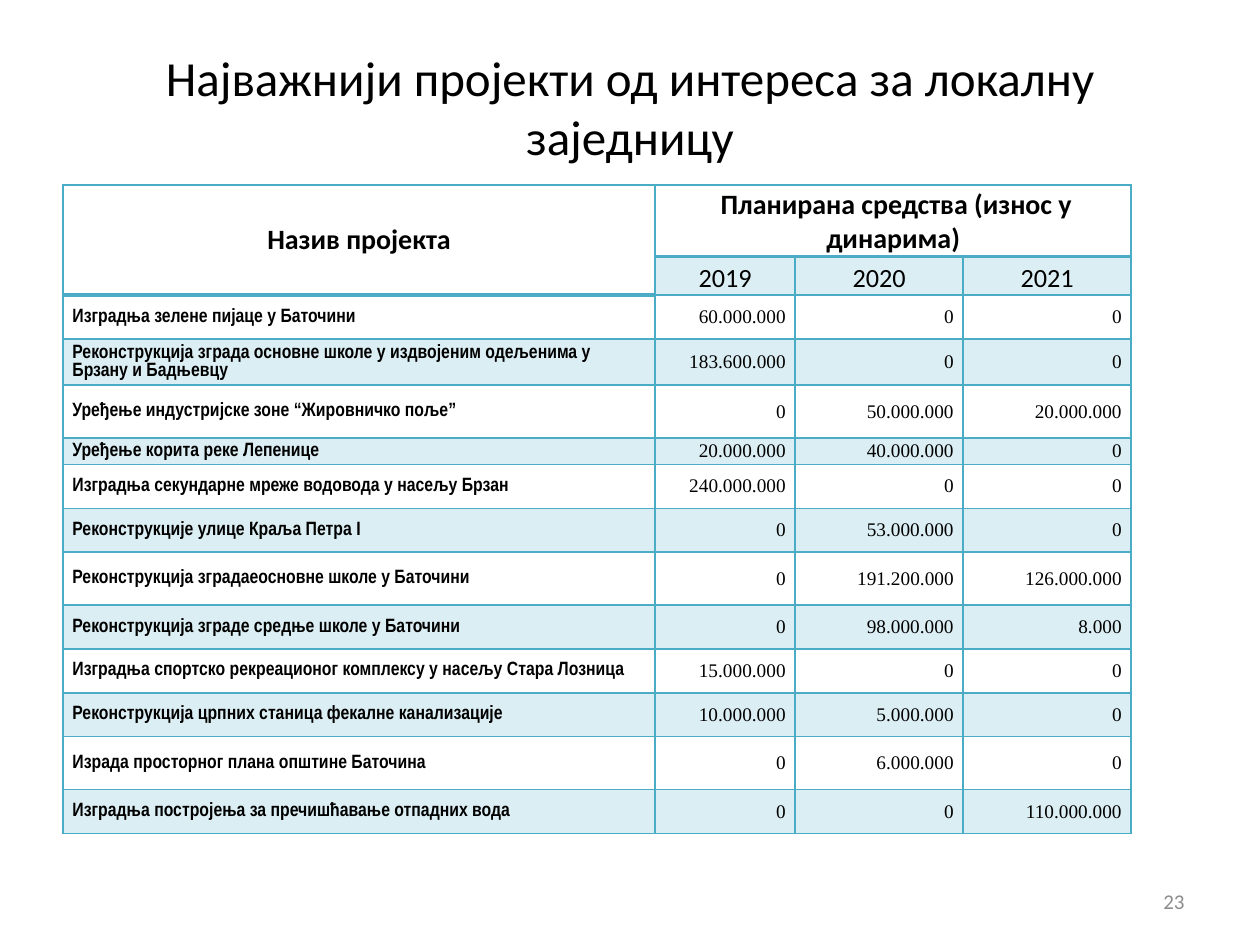
from lxml import etree
from pptx import Presentation
from pptx.dml.color import RGBColor
from pptx.enum.text import MSO_ANCHOR, PP_ALIGN
from pptx.oxml.ns import qn
from pptx.util import Pt

LEFT, CENTER, RIGHT = PP_ALIGN.LEFT, PP_ALIGN.CENTER, PP_ALIGN.RIGHT
MIDDLE, BOTTOM = MSO_ANCHOR.MIDDLE, MSO_ANCHOR.BOTTOM
TEAL, BLACK, GRAY = "4BACC6", "000000", "8C8C8C"

YEARS = ["2019", "2020", "2021"]
TALL, NORMAL, SHORT = 30.2, 25.1, 15.1
# Project name, planned amounts by year, row height
PROJECTS = [
    ("Изградња зелене пијаце у Баточини", ["60.000.000", "0", "0"], NORMAL),
    ("Реконструкција зграда основне школе у издвојеним одељенима у Брзану и Бадњевцу",
     ["183.600.000", "0", "0"], NORMAL),
    ("Уређење индустријске зоне “Жировничко поље”", ["0", "50.000.000", "20.000.000"], TALL),
    ("Уређење корита реке Лепенице", ["20.000.000", "40.000.000", "0"], SHORT),
    ("Изградња секундарне мреже водовода у насељу Брзан", ["240.000.000", "0", "0"], NORMAL),
    ("Реконструкције улице Краља Петра I", ["0", "53.000.000", "0"], NORMAL),
    ("Реконструкција зградаеосновне школе у Баточини",
     ["0", "191.200.000", "126.000.000"], TALL),
    ("Реконструкција зграде средње школе у Баточини", ["0", "98.000.000", "8.000"], NORMAL),
    ("Изградња спортско рекреационог комплексу у насељу Стара Лозница",
     ["15.000.000", "0", "0"], NORMAL),
    ("Реконструкција црпних станица фекалне канализације",
     ["10.000.000", "5.000.000", "0"], NORMAL),
    ("Израда просторног плана општине Баточина", ["0", "6.000.000", "0"], TALL),
    ("Изградња постројења за пречишћавање отпадних вода", ["0", "0", "110.000.000"], NORMAL),
]
HEADER_HEIGHTS = [40.8, 22]
COLUMN_WIDTHS = [338.4, 80, 96, 96]


def color(hex_value):
    return RGBColor.from_string(hex_value)


def write(frame, text, size=11, font="Calibri", ink=BLACK, bold=False, align=LEFT):
    frame.word_wrap = True
    paragraph = frame.paragraphs[0]
    paragraph.alignment = align
    run = paragraph.add_run()
    run.text = text
    run.font.size = Pt(size)
    run.font.name = font
    run.font.bold = bold
    run.font.color.rgb = color(ink)


def add_label(slide, box, text, **text_format):
    label = slide.shapes.add_textbox(*map(Pt, box))
    label.text_frame.vertical_anchor = MIDDLE
    write(label.text_frame, text, **text_format)


def set_borders(cell, top, bottom):
    properties = cell._tc.get_or_add_tcPr()
    for side, width in (("L", 1), ("R", 1), ("T", top), ("B", bottom)):
        line = etree.SubElement(properties, qn(f"a:ln{side}"), w=str(Pt(width)))
        fill = etree.SubElement(line, qn("a:solidFill"))
        etree.SubElement(fill, qn("a:srgbClr"), val=TEAL)


def tint(cell):
    cell.fill.solid()
    cell.fill.fore_color.rgb = color(TEAL)
    shade = cell._tc.tcPr.find(f"{qn('a:solidFill')}/{qn('a:srgbClr')}")
    etree.SubElement(shade, qn("a:alpha"), val="20000")


def style_cell(cell, row, column):
    cell.margin_left = cell.margin_right = Pt(5.4)
    cell.margin_top = cell.margin_bottom = 0
    header_cell = row < len(HEADER_HEIGHTS) and column > 0
    cell.vertical_anchor = BOTTOM if header_cell else MIDDLE
    # The heavy rule runs below the merged header cells
    heavy_row = 1 if column == 0 else 0
    heavy_bottom = row == heavy_row or row == 0
    set_borders(cell, 2 if row == heavy_row + 1 else 1, 2 if heavy_bottom else 1)
    if row % 2 == 1 and (row > 1 or column > 0):
        tint(cell)
    else:
        cell.fill.background()


def add_project_table(slide, left, top):
    heights = HEADER_HEIGHTS + [height for _, _, height in PROJECTS]
    table = slide.shapes.add_table(
        len(heights), len(COLUMN_WIDTHS), Pt(left), Pt(top),
        Pt(sum(COLUMN_WIDTHS)), Pt(sum(heights))).table
    table.first_row = table.horz_banding = False
    for column, width in zip(table.columns, COLUMN_WIDTHS):
        column.width = Pt(width)
    for row, height in enumerate(heights):
        table.rows[row].height = Pt(height)
        for column in range(len(COLUMN_WIDTHS)):
            style_cell(table.cell(row, column), row, column)

    # Header
    table.cell(0, 0).merge(table.cell(1, 0))
    table.cell(0, 1).merge(table.cell(0, 3))
    for column, heading in enumerate(
            ["Назив пројекта", " Планирана средства (износ у динарима)"]):
        write(table.cell(0, column).text_frame, heading, size=16, bold=True, align=CENTER)
    for column, year in enumerate(YEARS, 1):
        write(table.cell(1, column).text_frame, year, size=15, align=CENTER)

    # Projects
    for row, (project, amounts, _) in enumerate(PROJECTS, len(HEADER_HEIGHTS)):
        write(table.cell(row, 0).text_frame, project, font="Arial Narrow", bold=True)
        for column, amount in enumerate(amounts, 1):
            write(table.cell(row, column).text_frame, amount,
                  font="Times New Roman", align=RIGHT)


def main():
    presentation = Presentation()
    presentation.slide_width, presentation.slide_height = Pt(720), Pt(540)
    slide = presentation.slides.add_slide(presentation.slide_layouts[6])
    add_label(slide, (36, 21.6, 648, 78.5),
              "Најважнији пројекти од интереса за локалну заједницу", size=28, align=CENTER)
    add_label(slide, (516, 500.5, 168, 28.75), "23", size=12, ink=GRAY, align=RIGHT)
    add_project_table(slide, 36, 105.8)
    presentation.save("out.pptx")


if __name__ == "__main__":
    main()
